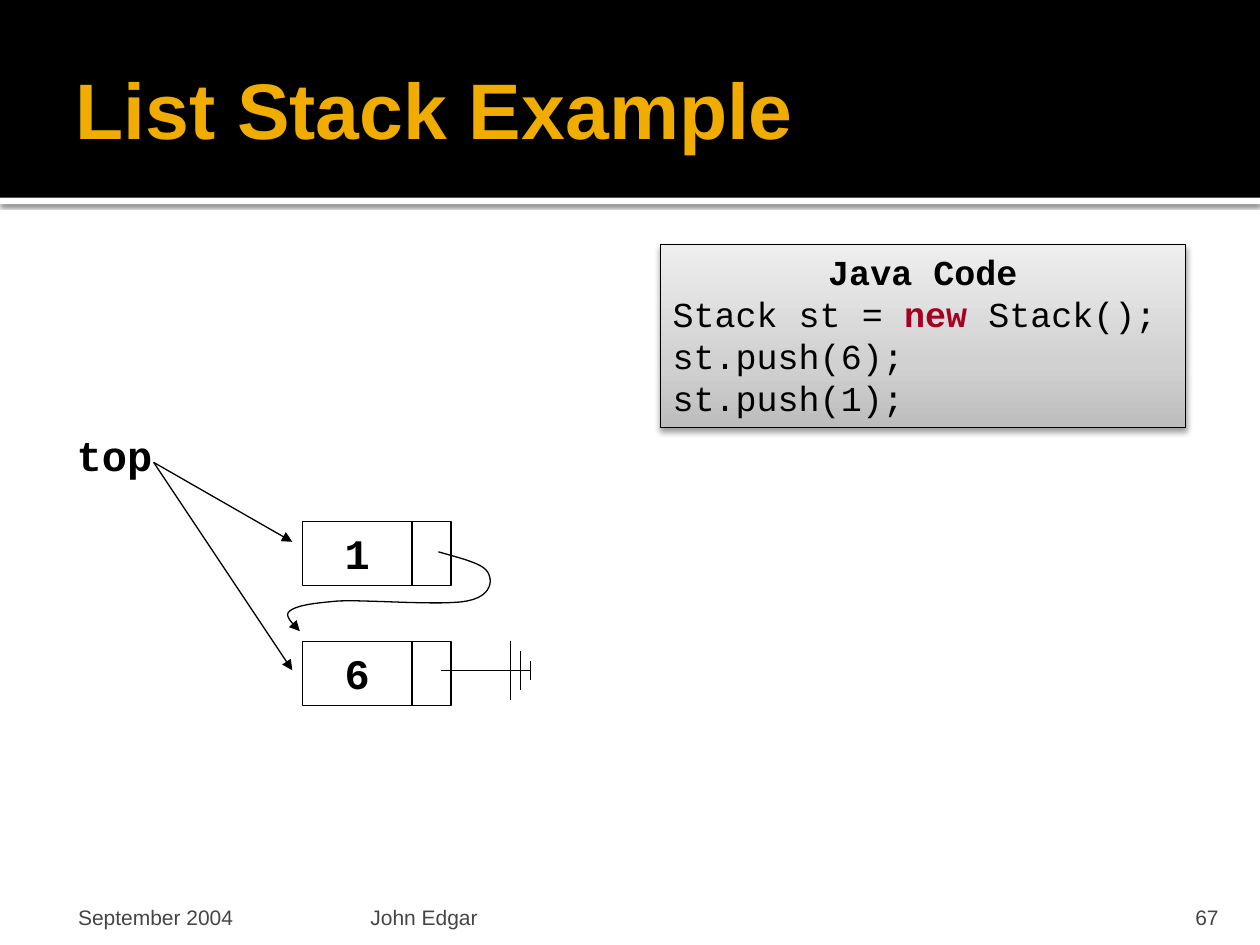
import lxml.etree
import pptx
import pptx.dml.color
import pptx.enum.dml
import pptx.enum.shapes
import pptx.enum.text
import pptx.oxml.ns
import pptx.util

# Grid: 100 columns by 75 rows over a 10 x 7.5 inch slide
COLUMNS, ROWS = 100, 75
CELL = pptx.util.Inches(10) // COLUMNS

COLORS = {
    "black": "000000",
    "white": "FFFFFF",
    "title": "F0AD00",
    "footer": "454545",
    "keyword": "A50021",
    "panel_dark": "BDBDBD",
    "panel_mid": "D1D1D1",
    "panel_light": "EEEEEE",
}
SANS, MONO = "Arial", "Courier New"
ALIGN = pptx.enum.text.PP_ALIGN
ANCHOR = pptx.enum.text.MSO_ANCHOR
RECTANGLE = pptx.enum.shapes.MSO_SHAPE.RECTANGLE
STRAIGHT = pptx.enum.shapes.MSO_CONNECTOR.STRAIGHT

# Linked-list geometry, in grid cells
NODE_LEFT, NODE_TOP, NODE_PITCH, NODE_HEIGHT = 24, 41.4, 9.5, 5.1
VALUE_WIDTH, LINK_WIDTH = 8.7, 3.1


def cells(*lengths):
    return [round(length * CELL) for length in lengths]


def rgb(name):
    return pptx.dml.color.RGBColor.from_string(COLORS[name])


def add_xml(parent, tag, **attributes):
    return lxml.etree.SubElement(parent, pptx.oxml.ns.qn(tag), attributes)


def draw_line(line, width=0.75):
    line.color.rgb = rgb("black")
    line.width = pptx.util.Pt(width)


def add_arrowhead(line):
    add_xml(line._get_or_add_ln(), "a:tailEnd", type="triangle")


def add_shadow(shape, opacity, blur, distance):
    effects = shape._element.spPr.find(pptx.oxml.ns.qn("a:effectLst"))
    shadow = add_xml(effects, "a:outerShdw", blurRad=str(pptx.util.Pt(blur)),
                     dist=str(pptx.util.Pt(distance)), dir="5400000",
                     algn="ctr", rotWithShape="0")
    color = add_xml(shadow, "a:srgbClr", val=COLORS["black"])
    add_xml(color, "a:alpha", val=str(opacity * 1000))


def add_box(shapes, place, fill=None, outline=None):
    box = shapes.add_shape(RECTANGLE, *cells(*place))
    box.shadow.inherit = False
    if fill:
        box.fill.solid()
        box.fill.fore_color.rgb = rgb(fill)
    else:
        box.fill.background()
    if outline:
        draw_line(box.line, outline)
    else:
        box.line.fill.background()
    return box


def add_gradient(shape, stops):
    shape.fill.gradient()
    shape.fill.gradient_angle = 90
    stop_list = next(shape._element.spPr.iter(pptx.oxml.ns.qn("a:gsLst")))
    for old_stop in list(stop_list):
        stop_list.remove(old_stop)
    for position, color in stops:
        stop = add_xml(stop_list, "a:gs", pos=str(position * 1000))
        add_xml(stop, "a:srgbClr", val=COLORS[color])


def write(shape, paragraphs, size, font, anchor=ANCHOR.TOP, insets=(1, 0.5, 1, 0.5), wrap=True):
    """Each paragraph is (alignment, [(text, color, bold), ...])."""
    frame = shape.text_frame
    frame.word_wrap = wrap
    frame.vertical_anchor = anchor
    (frame.margin_left, frame.margin_top,
     frame.margin_right, frame.margin_bottom) = cells(*insets)
    for index, (alignment, runs) in enumerate(paragraphs):
        paragraph = frame.add_paragraph() if index else frame.paragraphs[0]
        paragraph.alignment = alignment
        for text, color, bold in runs:
            run = paragraph.add_run()
            run.text = text
            run.font.size = pptx.util.Pt(size)
            run.font.name = font
            run.font.bold = bold
            run.font.color.rgb = rgb(color)


def add_label(slide, place, text, size, font, color, bold=False, align=ALIGN.LEFT, **layout):
    label = slide.shapes.add_textbox(*cells(*place))
    write(label, [(align, [(text, color, bold)])], size, font, **layout)


def add_line(shapes, start, end, arrow=False):
    line = shapes.add_connector(STRAIGHT, *cells(*start, *end))
    draw_line(line.line)
    if arrow:
        add_arrowhead(line.line)
    add_xml(line._element.spPr, "a:effectLst")


def add_node(slide, value, top):
    node = slide.shapes.add_group_shape().shapes
    value_box = add_box(node, (NODE_LEFT, top, VALUE_WIDTH, NODE_HEIGHT), outline=0.75)
    write(value_box, [(ALIGN.CENTER, [(value, "black", True)])], 24, MONO)
    add_box(node, (NODE_LEFT + VALUE_WIDTH, top, LINK_WIDTH, NODE_HEIGHT), outline=0.75)


def add_curve(slide, start, segments, steps=12):
    """Draw joined cubic curves, each given as two controls and an end."""
    points = [start]
    for first, second, end in segments:
        begin = points[-1]
        for step in range(1, steps + 1):
            t = step / steps
            weights = ((1 - t) ** 3, 3 * t * (1 - t) ** 2, 3 * t * t * (1 - t), t ** 3)
            points.append(tuple(
                sum(weight * value for weight, value in zip(weights, axis))
                for axis in zip(begin, first, second, end)))
    builder = slide.shapes.build_freeform(*cells(*start))
    builder.add_line_segments([cells(*point) for point in points[1:]], close=False)
    curve = builder.convert_to_shape()
    curve.shadow.inherit = False
    curve.fill.background()
    draw_line(curve.line)
    add_arrowhead(curve.line)


def add_null_symbol(slide, left, middle):
    symbol = slide.shapes.add_group_shape().shapes
    add_line(symbol, (left, middle), (left + 7.1, middle))
    for bar, half_height in enumerate((2.35, 1.55, 0.75)):
        x = left + 5.5 + 0.8 * bar
        add_line(symbol, (x, middle - half_height), (x, middle + half_height))


def add_header(slide):
    stripe = add_box(slide.shapes, (0, 15.7, COLUMNS, 0.5), "white")
    add_shadow(stripe, 60, 2.5, 0.8)
    add_box(slide.shapes, (0, 0, COLUMNS, 15.7), "black")
    add_label(slide, (5, 1.7, 90, 13.7), "List Stack Example", 45, SANS, "title",
              bold=True, anchor=ANCHOR.MIDDLE, insets=(1, 0.5, 0.5, 0.5))


def add_footer(slide):
    for left, width, inset, text, align in (
            (5, 23.3, 1.2, "September 2004", ALIGN.LEFT),
            (28.9, 60.2, 0.5, "John Edgar", ALIGN.LEFT),
            (89.7, 8, 1, "67", ALIGN.RIGHT)):
        add_label(slide, (left, 70.8, width, 3), text, 12, SANS, "footer", align=align,
                  anchor=ANCHOR.BOTTOM, insets=(inset, 0.5, 1, 0))


def add_code_panel(slide):
    panel = add_box(slide.shapes, (52.4, 19.4, 41.7, 14.5), outline=0.5)
    add_gradient(panel, [(0, "panel_dark"), (35, "panel_mid"), (100, "panel_light")])
    add_shadow(panel, 38, 3.5, 2)
    write(panel, [
        (ALIGN.CENTER, [("Java Code", "black", True)]),
        (ALIGN.LEFT, [("Stack st = ", "black", False), ("new", "keyword", True),
                      (" Stack();", "black", False)]),
        (ALIGN.LEFT, [("st.push(6);", "black", False)]),
        (ALIGN.LEFT, [("st.push(1);", "black", False)]),
    ], 20, MONO)


def add_linked_list(slide):
    add_label(slide, (5.1, 33.6, 8.3, 5), "top", 24, MONO, "black", bold=True, wrap=False)
    # Nodes with the old and new pointers from top
    for row, value, target in ((1, "6", 53.2), (0, "1", 43)):
        add_node(slide, value, NODE_TOP + row * NODE_PITCH)
        add_line(slide.shapes, (12.2, 36.7), (23.2, target), arrow=True)
    # Link from the first node to the second
    add_curve(slide, (34.8, 43.8), [
        ((36.5, 44.3), (38.3, 44.7), (38.7, 45.4)),
        ((39.1, 46), (39.1, 47.3), (37.1, 47.7)),
        ((35.2, 48.1), (29.3, 47.6), (26.9, 47.7)),
        ((24.5, 47.9), (23.5, 48.1), (23, 48.5)),
        ((22.4, 48.9), (23.6, 49.8), (23.8, 50.1)),
    ])
    add_null_symbol(slide, 35, 53.2)


def main():
    deck = pptx.Presentation()
    deck.slide_width, deck.slide_height = cells(COLUMNS, ROWS)
    slide = deck.slides.add_slide(deck.slide_layouts[6])
    slide.background.fill.solid()
    slide.background.fill.fore_color.rgb = rgb("white")
    add_header(slide)
    add_footer(slide)
    add_code_panel(slide)
    add_linked_list(slide)
    deck.save("out.pptx")


if __name__ == "__main__":
    main()
